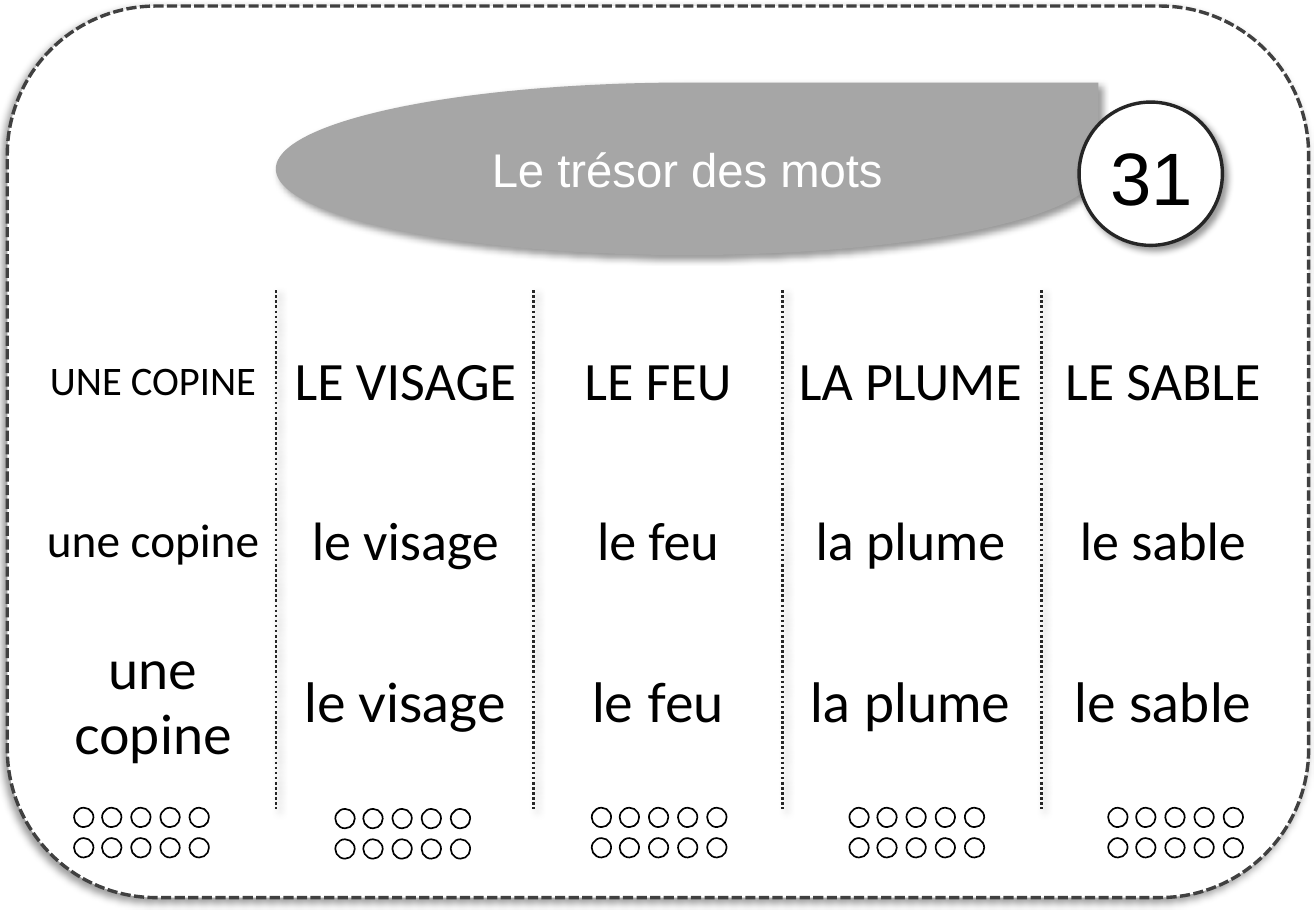
from lxml import etree
from pptx import Presentation
from pptx.dml.color import RGBColor
from pptx.enum.dml import MSO_LINE
from pptx.enum.shapes import MSO_CONNECTOR, MSO_SHAPE
from pptx.enum.text import MSO_ANCHOR, PP_ALIGN
from pptx.oxml.ns import qn
from pptx.util import Pt

PX = 9144  # 100 px to the inch
WHITE = RGBColor(0xFF, 0xFF, 0xFF)
BLACK = RGBColor(0, 0, 0)
GREY = RGBColor(0xA6, 0xA6, 0xA6)
DARK = RGBColor(0x26, 0x26, 0x26)
EDGE = RGBColor(0x40, 0x40, 0x40)

CARD, DROP, OVAL = MSO_SHAPE.ROUNDED_RECTANGLE, MSO_SHAPE.TEAR, MSO_SHAPE.OVAL
STRAIGHT = MSO_CONNECTOR.STRAIGHT
DASH, DOT = MSO_LINE.SQUARE_DOT, MSO_LINE.ROUND_DOT
MIDDLE, TOP = MSO_ANCHOR.MIDDLE, MSO_ANCHOR.TOP
CENTER = PP_ALIGN.CENTER
PLAIN = "{2D5ABB26-0587-4C30-8999-92F81FD0307C}"  # table style without grid

WORDS = ["une copine", "le visage", "le feu", "la plume", "le sable"]
ROWS = [  # font, size of the first word, size of the others
    ([word.upper() for word in WORDS], "Calibri", 24, 32),
    (WORDS, "Calibri", 28, 32),
    (WORDS, "Lato", 32, 32),
]
RULES = [227, 439, 644, 857]
DOTS = [(61, 665), (276, 666), (487, 665), (699, 665), (912, 665)]


def px(*values):
    return [value * PX for value in values]


def put(target, form):
    """Set each attribute named in form on target."""
    for name, value in form.items():
        setattr(target, name, value)


def stroke(line, color, width, dash=None):
    line.color.rgb = color
    put(line, {"width": Pt(width), "dash_style": dash})


def shade(shape, angle=None):
    """Give the shape a soft shadow at angle, or none at all."""
    effects = etree.SubElement(shape._element.spPr, qn("a:effectLst"))
    if angle is None:
        return
    outer = etree.SubElement(effects, qn("a:outerShdw"), blurRad=str(Pt(4)),
                             dist=str(Pt(3)), dir=str(angle * 60000),
                             algn="tl", rotWithShape="0")
    color = etree.SubElement(outer, qn("a:srgbClr"), val=str(BLACK))
    etree.SubElement(color, qn("a:alpha"), val="40000")


def add_form(shapes, kind, box, fill, line=None, angle=None):
    shape = shapes.add_shape(kind, *px(*box))
    shape.fill.solid()
    shape.fill.fore_color.rgb = fill
    if line:
        stroke(shape.line, *line)
    else:
        shape.line.fill.background()
    shade(shape, angle)
    return shape


def write(frame, text, font, size, color=BLACK):
    para = frame.paragraphs[0]
    para.alignment = CENTER
    run = para.add_run()
    run.text = text
    put(run.font, {"name": font, "size": Pt(size), "bold": False})
    run.font.color.rgb = color


def add_rule(shapes, x):
    rule = shapes.add_connector(STRAIGHT, *px(x, 239, x, 666))
    stroke(rule.line, DARK, 1.5, DOT)
    shade(rule, 45)


def add_dots(shapes, left, top):
    """Draw two rows of five small rings as one group."""
    group = shapes.add_group_shape()
    for row in range(2):
        for col in range(5):
            box = (left + 95 * col // 4, top + 25 * row, 16, 16)
            add_form(group.shapes, OVAL, box, WHITE, (BLACK, 1))


def add_title(shapes):
    drop = add_form(shapes, DROP, (227, 68, 677, 142), GREY, angle=45)
    put(drop.text_frame, {"vertical_anchor": MIDDLE, "word_wrap": True})
    write(drop.text_frame, "Le trésor des mots", "Arial", 28, WHITE)


def add_badge(shapes):
    add_form(shapes, OVAL, (888, 84, 118, 118), WHITE, (DARK, 2), 45)
    frame = shapes.add_textbox(*px(889, 97, 118, 110)).text_frame
    put(frame, {"word_wrap": True, "vertical_anchor": TOP,
                "margin_top": 11 * PX})
    write(frame, "31", "Arial", 44)


def add_words(shapes):
    size = len(ROWS), len(WORDS)
    table = shapes.add_table(*size, *px(22, 249, 1039, 394)).table
    put(table, {"first_row": False, "horz_banding": False})
    table._tbl.tblPr.find(qn("a:tableStyleId")).text = PLAIN
    for r, (words, font, first, rest) in enumerate(ROWS):
        for c, word in enumerate(words):
            cell = table.cell(r, c)
            cell.fill.background()
            cell.vertical_anchor = MIDDLE
            write(cell.text_frame, word, font, rest if c else first)


def main():
    deck = Presentation()
    put(deck, {"slide_width": 1083 * PX, "slide_height": 750 * PX})
    shapes = deck.slides.add_slide(deck.slide_layouts[6]).shapes
    add_form(shapes, CARD, (6, 5, 1071, 734), WHITE, (EDGE, 2, DASH), 135)
    for x in RULES:
        add_rule(shapes, x)
    for left, top in DOTS:
        add_dots(shapes, left, top)
    add_title(shapes)
    add_badge(shapes)
    add_words(shapes)
    deck.save("out.pptx")


if __name__ == "__main__":
    main()
